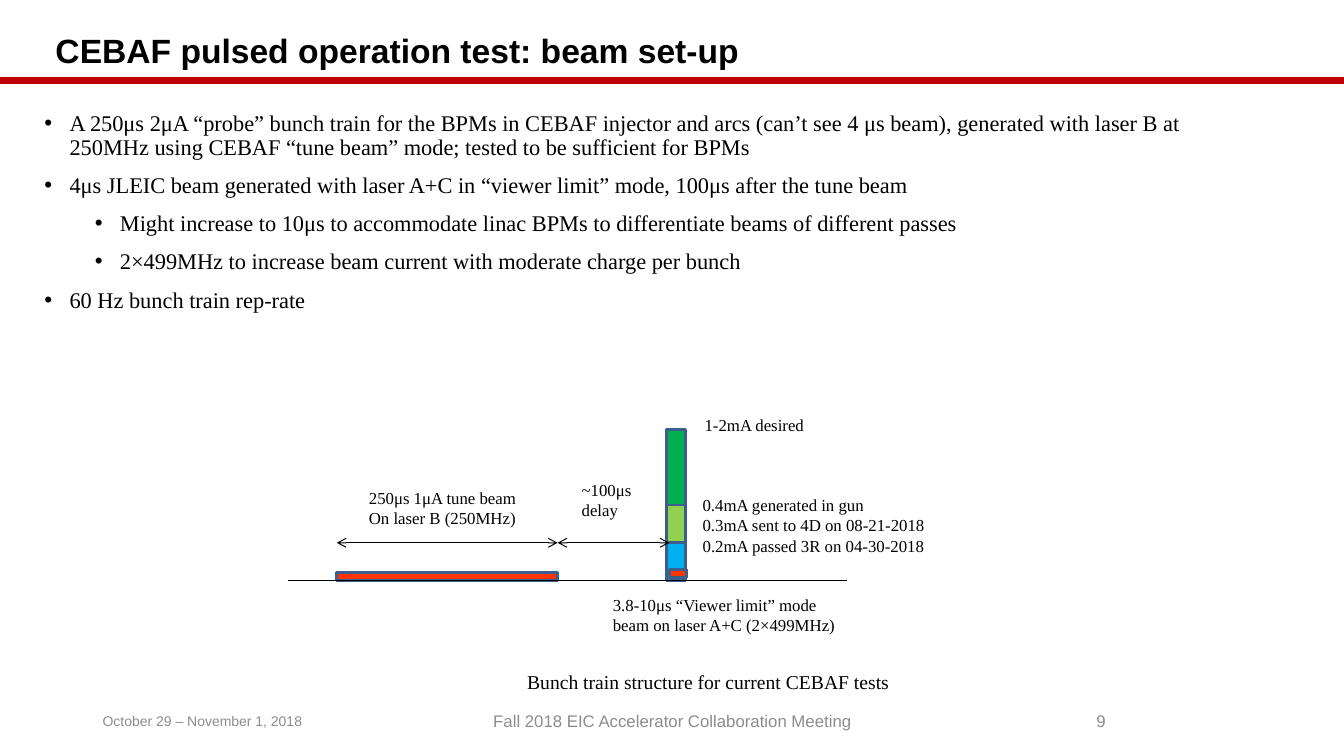
"""Build the slide on the beam set-up of the CEBAF pulsed operation test."""
from dataclasses import dataclass

from lxml import etree
from pptx import Presentation
from pptx.dml.color import RGBColor
from pptx.enum.shapes import MSO_CONNECTOR, MSO_SHAPE
from pptx.enum.text import MSO_ANCHOR, MSO_AUTO_SIZE, PP_ALIGN
from pptx.oxml.ns import qn
from pptx.slide import Slide
from pptx.text.text import TextFrame, _Paragraph
from pptx.util import Inches, Pt

STRAIGHT = MSO_CONNECTOR.STRAIGHT
RECTANGLE = MSO_SHAPE.RECTANGLE
TOP, MIDDLE = MSO_ANCHOR.TOP, MSO_ANCHOR.MIDDLE
LEFT, CENTER = PP_ALIGN.LEFT, PP_ALIGN.CENTER
FIXED, GROW = MSO_AUTO_SIZE.NONE, MSO_AUTO_SIZE.SHAPE_TO_FIT_TEXT

WIDTH, HEIGHT = Inches(13.33), Inches(7.5)
SANS, SERIF = "Arial", "Times New Roman"
COLORS = {
    "black": "000000", "gray": "8C8C8C", "rule": "C00000", "outline": "3A5F8C",
    "probe": "FF3300", "passed": "00B0F0", "sent": "92D050", "desired": "00B050",
}

BASELINE = 76.8
LEVEL = 5
ARROW_ROW = BASELINE - LEVEL
TUNE_START, TUNE_END = 25.06, 41.49
STACK_LEFT, STACK_WIDTH = 49.59, 1.43
PROBE_HEIGHT = 1.07
FOOTER_TOP, FOOTER_HEIGHT = 92.67, 5.33


@dataclass
class Box:
    """Area in percent of the slide's width and height."""
    left: float
    top: float
    width: float
    height: float


@dataclass
class Label:
    """Text box with one paragraph per line."""
    box: Box
    lines: list[str]
    size: int = 12
    font: str = SERIF
    color: str = "black"
    align: PP_ALIGN = LEFT
    anchor: MSO_ANCHOR = TOP
    wrap: bool = True
    fit: MSO_AUTO_SIZE = GROW


@dataclass
class Bar:
    """Outlined block of beam."""
    box: Box
    color: str


@dataclass
class Line:
    """Horizontal line, optionally with arrowheads at both ends."""
    start: float
    end: float
    row: float
    color: str = "black"
    weight: float = 0.75
    arrows: bool = False


TITLE = "CEBAF pulsed operation test: beam set-up"
BULLETS = [
    (0, "A 250μs 2μA “probe” bunch train for the BPMs in CEBAF injector and arcs "
        "(can’t see 4 μs beam), generated with laser B at 250MHz using CEBAF "
        "“tune beam” mode; tested to be sufficient for BPMs"),
    (0, "4μs JLEIC beam generated with laser A+C in “viewer limit” mode, "
        "100μs after the tune beam"),
    (1, "Might increase to 10μs to accommodate linac BPMs to differentiate beams "
        "of different passes"),
    (1, "2×499MHz to increase beam current with moderate charge per bunch"),
    (0, "60 Hz bunch train rep-rate"),
]
LINES = [
    Line(0, 100, 10.67, "rule", 4.5),
    Line(21.46, 63.02, BASELINE),
    Line(TUNE_START, TUNE_END, ARROW_ROW, arrows=True),
    Line(TUNE_END, 49.81, ARROW_ROW, arrows=True),
]
STACK = [("passed", 1), ("sent", 1), ("desired", 2)]
TUNE_BAR = Bar(Box(TUNE_START, BASELINE - PROBE_HEIGHT, TUNE_END - TUNE_START,
                   PROBE_HEIGHT), "probe")
PROBE_BAR = Bar(Box(49.81, 75.33, 1.28, PROBE_HEIGHT), "probe")
LABELS = [
    Label(Box(6.9, FOOTER_TOP, 22.51, FOOTER_HEIGHT), ["October 29 – November 1, 2018"],
          10, SANS, "gray", LEFT, MIDDLE, fit=FIXED),
    Label(Box(33.16, FOOTER_TOP, 33.76, FOOTER_HEIGHT),
          ["Fall 2018 EIC Accelerator Collaboration Meeting"],
          12, SANS, "gray", CENTER, MIDDLE, fit=FIXED),
    Label(Box(70.67, FOOTER_TOP, 22.51, FOOTER_HEIGHT), ["9"],
          12, SANS, "gray", CENTER, MIDDLE, fit=FIXED),
    Label(Box(38.48, 88, 31.21, 4.53),
          ["Bunch train structure for current CEBAF tests"], 14),
    Label(Box(26.71, 63.87, 12.6, 6.67),
          ["250μs 1μA tune beam", "On laser B (250MHz)"], wrap=False),
    Label(Box(42.54, 62.8, 6.23, 6.67), ["~100μs delay"]),
    Label(Box(44.86, 78, 18.23, 6.67),
          ["3.8-10μs “Viewer limit” mode beam on laser A+C (2×499MHz)"]),
    Label(Box(51.54, 64.8, 18.23, 6.67),
          ["0.4mA generated in gun", "0.3mA sent to 4D on 08-21-2018"], wrap=False),
    Label(Box(51.69, 54.27, 9, 4), ["1-2mA desired"], wrap=False),
    Label(Box(51.54, 70.27, 18.15, 4), ["0.2mA passed 3R on 04-30-2018"], wrap=False),
]


def across(share: float) -> int:
    return round(WIDTH * share / 100)


def down(share: float) -> int:
    return round(HEIGHT * share / 100)


def area(box: Box) -> tuple[int, int, int, int]:
    return across(box.left), down(box.top), across(box.width), down(box.height)


def rgb(name: str) -> RGBColor:
    return RGBColor.from_string(COLORS[name])


def add_text(paragraph: _Paragraph, text: str, size: int, font: str,
             color: str = "black", bold: bool = False) -> None:
    run = paragraph.add_run()
    run.text = text
    run.font.size, run.font.name, run.font.bold = Pt(size), font, bold
    run.font.color.rgb = rgb(color)


def fill_placeholder(slide: Slide, index: int, box: Box, anchor: MSO_ANCHOR) -> TextFrame:
    shape = slide.placeholders[index]
    shape.left, shape.top, shape.width, shape.height = area(box)
    frame = shape.text_frame
    frame.auto_size, frame.vertical_anchor = FIXED, anchor
    return frame


def add_title(slide: Slide) -> None:
    frame = fill_placeholder(slide, 0, Box(3.38, 3.47, 92.57, 7.07), MIDDLE)
    paragraph = frame.paragraphs[0]
    paragraph.alignment, paragraph.line_spacing = LEFT, 0.9
    add_text(paragraph, TITLE, 24, SANS, bold=True)


def add_bullets(slide: Slide) -> None:
    frame = fill_placeholder(slide, 1, Box(2.55, 14.13, 87.4, 43.73), TOP)
    for position, (level, text) in enumerate(BULLETS):
        paragraph = frame.add_paragraph() if position else frame.paragraphs[0]
        properties = paragraph._p.get_or_add_pPr()
        properties.set("marL", str(Inches(0.25 + 0.5 * level)))
        properties.set("indent", str(Inches(-0.25)))
        etree.SubElement(properties, qn("a:buFont")).set("typeface", SANS)
        etree.SubElement(properties, qn("a:buChar")).set("char", "•")
        paragraph.level, paragraph.line_spacing = level, 0.9
        paragraph.space_before = Pt(10 if position else 0)
        add_text(paragraph, text, 16, SERIF)


def add_line(slide: Slide, line: Line) -> None:
    connector = slide.shapes.add_connector(
        STRAIGHT, across(line.start), down(line.row), across(line.end), down(line.row))
    connector.line.color.rgb = rgb(line.color)
    connector.line.width = Pt(line.weight)
    properties = connector._element.spPr
    if line.arrows:
        for tag in ("a:headEnd", "a:tailEnd"):
            etree.SubElement(properties.find(qn("a:ln")), qn(tag)).set("type", "arrow")
    etree.SubElement(properties, qn("a:effectLst"))


def add_bar(slide: Slide, bar: Bar) -> None:
    shape = slide.shapes.add_shape(RECTANGLE, *area(bar.box))
    shape.shadow.inherit = False
    shape.fill.solid()
    shape.fill.fore_color.rgb = rgb(bar.color)
    shape.line.color.rgb, shape.line.width = rgb("outline"), Pt(2)


def add_stack(slide: Slide) -> None:
    top = BASELINE
    for color, levels in STACK:
        top -= levels * LEVEL
        add_bar(slide, Bar(Box(STACK_LEFT, top, STACK_WIDTH, levels * LEVEL), color))


def add_label(slide: Slide, label: Label) -> None:
    frame = slide.shapes.add_textbox(*area(label.box)).text_frame
    frame.word_wrap, frame.auto_size = label.wrap, label.fit
    frame.vertical_anchor = label.anchor
    for position, text in enumerate(label.lines):
        paragraph = frame.add_paragraph() if position else frame.paragraphs[0]
        paragraph.alignment = label.align
        add_text(paragraph, text, label.size, label.font, label.color)


def main() -> None:
    presentation = Presentation()
    presentation.slide_width, presentation.slide_height = WIDTH, HEIGHT
    slide = presentation.slides.add_slide(presentation.slide_layouts[1])
    add_title(slide)
    add_bullets(slide)
    add_bar(slide, TUNE_BAR)
    add_stack(slide)
    add_bar(slide, PROBE_BAR)
    for line in LINES:
        add_line(slide, line)
    for label in LABELS:
        add_label(slide, label)
    presentation.save("out.pptx")


if __name__ == "__main__":
    main()
